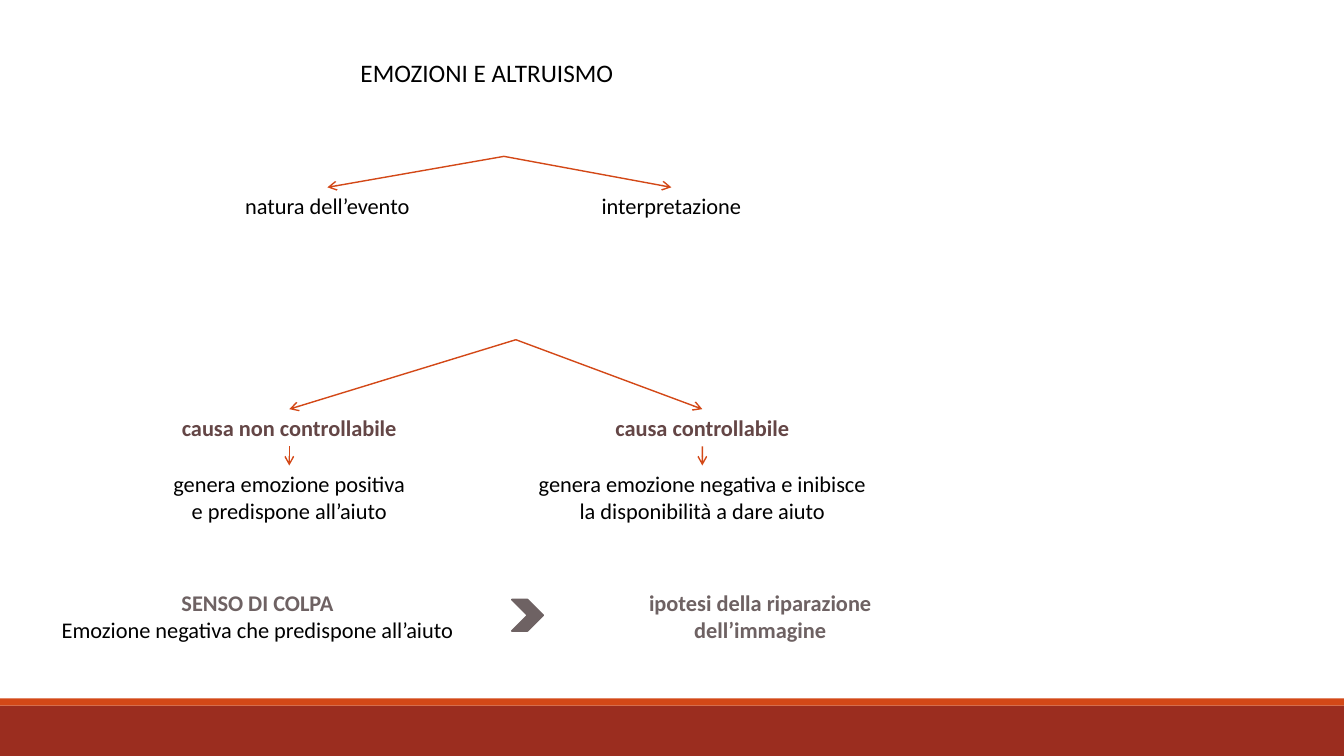
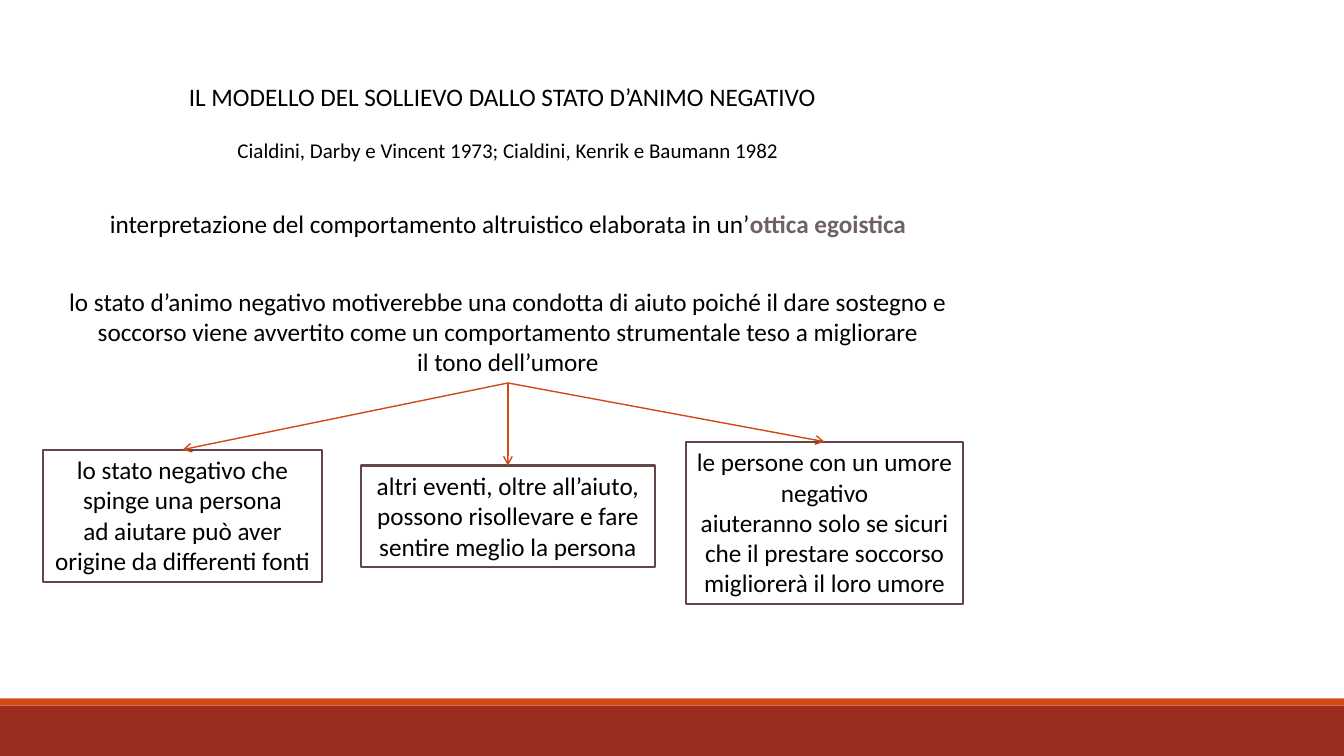
from lxml import etree
from pptx import Presentation
from pptx.dml.color import RGBColor
from pptx.enum.shapes import MSO_CONNECTOR, MSO_SHAPE
from pptx.enum.text import MSO_ANCHOR, MSO_AUTO_SIZE, PP_ALIGN
from pptx.oxml.ns import qn
from pptx.util import Cm, Pt

STRAIGHT = MSO_CONNECTOR.STRAIGHT
RECTANGLE = MSO_SHAPE.RECTANGLE
CHEVRON = MSO_SHAPE.CHEVRON
TOP_ANCHOR = MSO_ANCHOR.TOP
NO_AUTOFIT = MSO_AUTO_SIZE.NONE
CENTER = PP_ALIGN.CENTER
TOP, BOTTOM = 0, 2
TITLE_ONLY = 5

FONT = "Calibri"
WIDTH, HEIGHT = 33.87, 19.05
COLORS = {
    "text": "000000",
    "cause": "644646",
    "key": "6E6263",
    "accent": "D34817",
    "band": "9B2D1F",
}
BANDS = [("band", 17.78, 1.27), ("accent", 17.6, 0.18)]

EMOTIONS_TITLE = ("EMOZIONI E ALTRUISMO", 12.27, 1.32, 7.5)
FACTORS_APEX = (12.7, 3.94)
FACTORS = [("natura dell’evento", 8.25), ("interpretazione", 16.92)]
CAUSES_APEX = (13, 8.56)
CAUSES = [
    ("causa non controllabile",
     ["genera emozione positiva", "e predispone all’aiuto"], 7.29, 6.4),
    ("causa controllabile",
     ["genera emozione negativa e inibisce la disponibilità a dare aiuto"], 17.7, 8.79),
]
GUILT = [
    [("SENSO DI COLPA", "key")],
    [("Emozione negativa che predispone all’aiuto", "text")],
]
REPAIR = [[("ipotesi della riparazione dell’immagine", "key")]]

MODEL_TITLE = ("IL MODELLO DEL SOLLIEVO DALLO STATO D’ANIMO NEGATIVO", 12.66, 1.93, 23.01)
MODEL_CENTER, MODEL_WIDTH = 12.8, 23.01
MODEL_TEXTS = [
    ([[("Cialdini, Darby e Vincent 1973; Cialdini, Kenrik e Baumann 1982", "text")]],
     3.33, 0.89, 15),
    ([[("interpretazione del comportamento altruistico elaborata in un’", "text"),
       ("ottica egoistica", "key")]], 5.13, 1.02, 18),
    ([[("lo stato d’animo negativo motiverebbe una condotta di aiuto poiché il dare "
        "sostegno e soccorso viene avvertito come un comportamento strumentale teso a "
        "migliorare", "text")],
      [("il tono dell’umore", "text")]], 7.09, 2.56, 18),
]
CONSEQUENCES = [
    (["lo stato negativo che spinge una persona",
      "ad aiutare può aver origine da differenti fonti"], 4.6, 11.33, 7.02, 3.33),
    (["altri eventi, oltre all’aiuto, possono risollevare e fare sentire meglio la persona"],
     12.8, 11.73, 7.4, 2.56),
    (["le persone con un umore negativo",
      "aiuteranno solo se sicuri che il prestare soccorso migliorerà il loro umore"],
     20.78, 11.13, 6.97, 4.1),
]


def color(name):
    return RGBColor.from_string(COLORS[name])


def plain(lines):
    return [[(line, "text")] for line in lines]


def box_around(center, top, width, height):
    return Cm(center - width / 2), Cm(top), Cm(width), Cm(height)


def write(shape, paragraphs, size):
    frame = shape.text_frame
    frame.word_wrap = True
    frame.auto_size = NO_AUTOFIT
    frame.vertical_anchor = TOP_ANCHOR
    for index, runs in enumerate(paragraphs):
        paragraph = frame.add_paragraph() if index else frame.paragraphs[0]
        paragraph.alignment = CENTER
        for text, style in runs:
            run = paragraph.add_run()
            run.text = text
            run.font.name = FONT
            run.font.size = Pt(size)
            run.font.bold = style != "text"
            run.font.color.rgb = color(style)


def add_text(slide, paragraphs, center, top, width, height, size=16):
    shape = slide.shapes.add_textbox(*box_around(center, top, width, height))
    write(shape, paragraphs, size)
    return shape


def add_preset(slide, preset, left, top, width, height, fill=None, line=None, line_width=1.5):
    shape = slide.shapes.add_shape(preset, left, top, width, height)
    shape.shadow.inherit = False
    if fill:
        shape.fill.solid()
        shape.fill.fore_color.rgb = color(fill)
    else:
        shape.fill.background()
    if line:
        shape.line.color.rgb = color(line)
        shape.line.width = Pt(line_width)
    else:
        shape.line.fill.background()
    return shape


def add_arrow(slide, target, source=None, apex=(0, 0)):
    x, y = map(Cm, apex)
    arrow = slide.shapes.add_connector(STRAIGHT, x, y, x, y)
    if source is not None:
        arrow.begin_connect(source, BOTTOM)
    arrow.end_connect(target, TOP)
    arrow.line.color.rgb = color("accent")
    arrow.line.width = Pt(1)
    properties = arrow.element.spPr
    etree.SubElement(properties.find(qn("a:ln")), qn("a:tailEnd"), type="arrow")
    etree.SubElement(properties, qn("a:effectLst"))


def add_slide(presentation, title):
    slide = presentation.slides.add_slide(presentation.slide_layouts[TITLE_ONLY])
    text, center, top, width = title
    shape = slide.shapes.title
    shape.left, shape.top, shape.width, shape.height = box_around(center, top, width, 1.02)
    write(shape, plain([text]), 18)
    return slide


def add_master_bands(presentation, slide):
    master_tree = presentation.slide_master.shapes.element
    for number, (fill, top, height) in enumerate(BANDS, 101):
        band = add_preset(slide, RECTANGLE, 0, Cm(top), Cm(WIDTH), Cm(height), fill)
        band.element.nvSpPr.cNvPr.set("id", str(number))
        master_tree.append(band.element)


def fill_emotions(slide):
    for text, center in FACTORS:
        factor = add_text(slide, plain([text]), center, 4.72, 5.2, 0.94)
        add_arrow(slide, factor, apex=FACTORS_APEX)
    for text, effect_lines, center, width in CAUSES:
        cause = add_text(slide, [[(text, "cause")]], center, 10.31, 6.4, 0.94)
        effect = add_text(slide, plain(effect_lines), center, 11.73, width, 1.63)
        add_arrow(slide, cause, apex=CAUSES_APEX)
        add_arrow(slide, effect, cause)
    add_text(slide, GUILT, 6.49, 14.73, 10.8, 1.63)
    add_text(slide, REPAIR, 19.16, 14.73, 8.51, 1.63)
    add_preset(slide, CHEVRON, Cm(12.9), Cm(15.11), Cm(0.79), Cm(0.79), "key", "key", 1.25)


def fill_model(slide):
    for paragraphs, top, height, size in MODEL_TEXTS:
        statement = add_text(slide, paragraphs, MODEL_CENTER, top, MODEL_WIDTH, height, size)
    for lines, *place in CONSEQUENCES:
        consequence = add_preset(slide, RECTANGLE, *box_around(*place), line="cause")
        write(consequence, plain(lines), 18)
        add_arrow(slide, consequence, statement)


def main():
    presentation = Presentation()
    presentation.slide_width, presentation.slide_height = Cm(WIDTH), Cm(HEIGHT)
    emotions = add_slide(presentation, EMOTIONS_TITLE)
    add_master_bands(presentation, emotions)
    fill_emotions(emotions)
    fill_model(add_slide(presentation, MODEL_TITLE))
    presentation.save("out.pptx")


if __name__ == "__main__":
    main()
